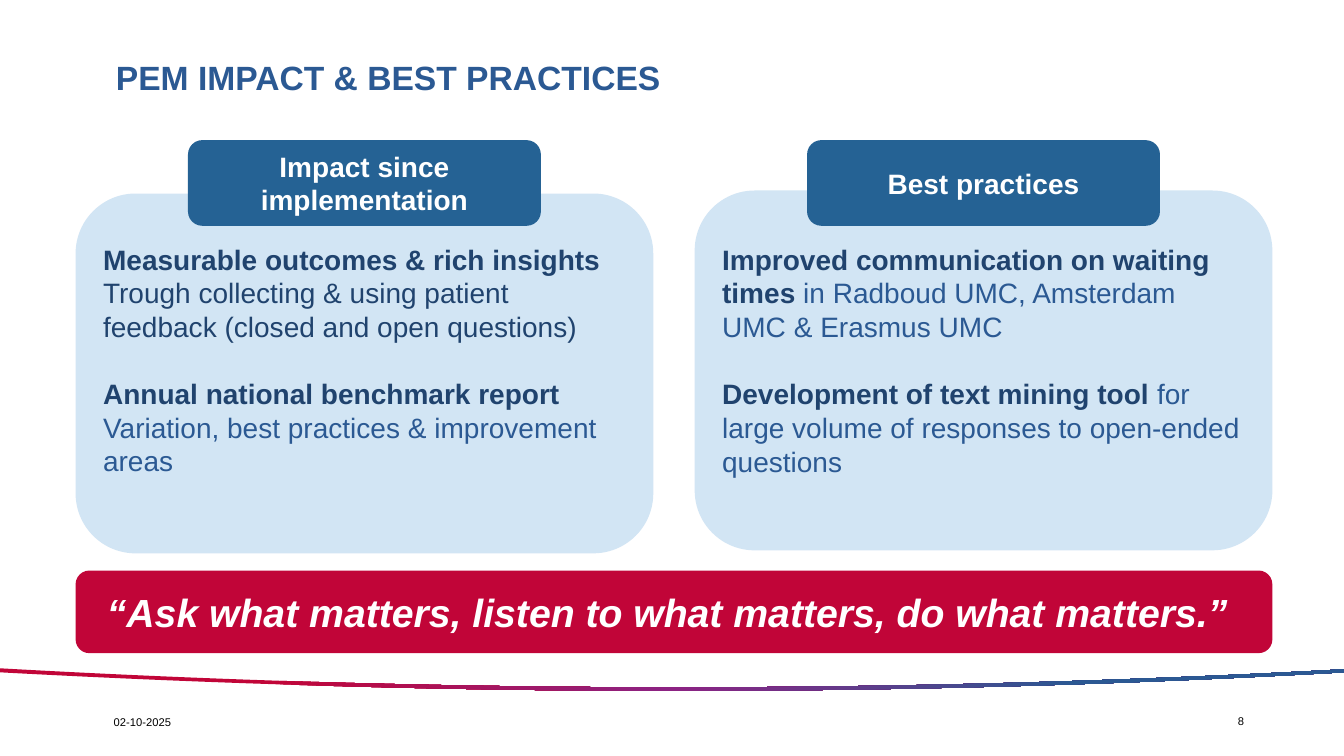
"""Builds the slide on PEM impact and best practices."""
from copy import deepcopy

from lxml import etree
from pptx import Presentation
from pptx.dml.color import RGBColor
from pptx.enum.shapes import MSO_SHAPE
from pptx.enum.text import MSO_ANCHOR, PP_ALIGN
from pptx.oxml.ns import qn
from pptx.util import Inches, Pt

ROUNDED = MSO_SHAPE.ROUNDED_RECTANGLE
TOP, MIDDLE = MSO_ANCHOR.TOP, MSO_ANCHOR.MIDDLE
LEFT, CENTER = PP_ALIGN.LEFT, PP_ALIGN.CENTER
COLORS = {"red": "C10538", "purple": "8C2383", "blue": "2B5993", "navy": "20436E",
          "header": "256294", "panel": "D2E5F4", "white": "FFFFFF", "black": "000000"}
WIDTH, HEIGHT = 13.33, 7.5
MARGIN = 0.75
PANEL_WIDTH, PANEL_HEIGHT = 5.73, 3.57
HEADER_WIDTH, HEADER_HEIGHT, HEADER_TOP = 3.5, 0.85, 1.39
COLUMN_STEP = 6.14
FIRST_LINE = 2.4
CORNER_INSET = 0.17
LINE_SPACE = 24

presentation = Presentation()
presentation.slide_width, presentation.slide_height = Inches(WIDTH), Inches(HEIGHT)
slide = presentation.slides.add_slide(presentation.slide_layouts[6])


def add_box(left, top, width, height, color=None):
    box = tuple(Inches(value) for value in (left, top, width, height))
    if color is None:
        return slide.shapes.add_textbox(*box)
    shape = slide.shapes.add_shape(ROUNDED, *box)
    shape.shadow.inherit = False
    shape.fill.solid()
    shape.fill.fore_color.rgb = RGBColor.from_string(COLORS[color])
    shape.line.fill.background()
    return shape


def write(shape, paragraphs, size, anchor=TOP, align=LEFT, insets=(0.1, 0.05), gap=0, wrap=True):
    frame = shape.text_frame
    frame.word_wrap = wrap
    frame.vertical_anchor = anchor
    frame.margin_left = frame.margin_right = Inches(insets[0])
    frame.margin_top = frame.margin_bottom = Inches(insets[1])
    for index, runs in enumerate(paragraphs):
        paragraph = frame.add_paragraph() if index else frame.paragraphs[0]
        paragraph.alignment = align
        if index and gap and runs[0][2]:
            paragraph.space_before = Pt(gap)
        for text, color, bold in runs:
            run = paragraph.add_run()
            run.text = text
            run.font.name, run.font.size, run.font.bold = "Arial", Pt(size), bold
            run.font.color.rgb = RGBColor.from_string(COLORS[color])


thirds = [WIDTH * third / 3 for third in range(4)]
lower_edge = list(zip(thirds, (6.67, 6.91, 6.92, 6.67)))
upper_edge = list(zip(thirds, (6.63, 6.88, 6.88, 6.64)))
outline = [(Inches(x), Inches(y)) for x, y in lower_edge + upper_edge[::-1]]
builder = slide.shapes.build_freeform(*outline[0])
builder.add_line_segments(outline[1:], close=True)
wave = builder.convert_to_shape()
segments = list(wave._element.iter(qn("a:lnTo")))
for first in (0, 4):
    curve = etree.Element(qn("a:cubicBezTo"))
    segments[first].addprevious(curve)
    for segment in segments[first:first + 3]:
        curve.append(segment[0])
        segment.getparent().remove(segment)
wave.shadow.inherit = False
wave.line.fill.background()
wave.fill.gradient()
wave.fill.gradient_angle = 0
stop_list = wave.fill._fill._gradFill.gsLst
stop_list.append(deepcopy(stop_list[-1]))
for stop, position, color in zip(wave.fill.gradient_stops, (0.2, 0.5, 0.8), ("red", "purple", "blue")):
    stop.position = position
    stop.color.rgb = RGBColor.from_string(COLORS[color])

title = add_box(1.15, 0.39, 11.42, 0.79)
write(title, [[("PEM IMPACT & BEST PRACTICES", "blue", True)]], 24, MIDDLE, insets=(0, 0))
title.text_frame.paragraphs[0].line_spacing = 0.9

columns = [
    ("Impact since implementation", 1.92, [
        [("Measurable outcomes & rich insights", "navy", True)],
        [("Trough collecting & using patient feedback (closed and open questions)", "navy", False)],
        [("Annual national benchmark report", "navy", True)],
        [("Variation, best practices & improvement areas", "blue", False)]]),
    ("Best practices", 1.89, [
        [("Improved communication on waiting times ", "navy", True),
         ("in Radboud UMC, Amsterdam UMC & Erasmus UMC", "blue", False)],
        [("Development of text mining tool ", "navy", True),
         ("for large volume of responses to open-ended questions", "blue", False)]]),
]
for column, (heading, top, paragraphs) in enumerate(columns):
    left = MARGIN + column * COLUMN_STEP
    panel = add_box(left, top, PANEL_WIDTH, PANEL_HEIGHT, "panel")
    write(panel, paragraphs, 20, insets=(0.1, FIRST_LINE - top - CORNER_INSET), gap=LINE_SPACE)
    header_left = left + (PANEL_WIDTH - HEADER_WIDTH) / 2
    header = add_box(header_left, HEADER_TOP, HEADER_WIDTH, HEADER_HEIGHT, "header")
    write(header, [[(heading, "white", True)]], 20, MIDDLE, CENTER)

add_box(MARGIN, 5.66, COLUMN_STEP + PANEL_WIDTH, 0.82, "red")
quote = add_box(1.06, 5.84, 11.25, 0.47)
write(quote, [[("“Ask what matters, listen to what matters, do what matters.”", "white", True)]],
      28, insets=(0, 0), wrap=False)
quote.text_frame.paragraphs[0].runs[0].font.italic = True

for text, left, top, width in (("02-10-2025", 1.03, 7.05, 1.97), ("8", 12.18, 7.04, 0.57)):
    write(add_box(left, top, width, 0.24), [[(text, "black", False)]], 8)

presentation.save("out.pptx")
